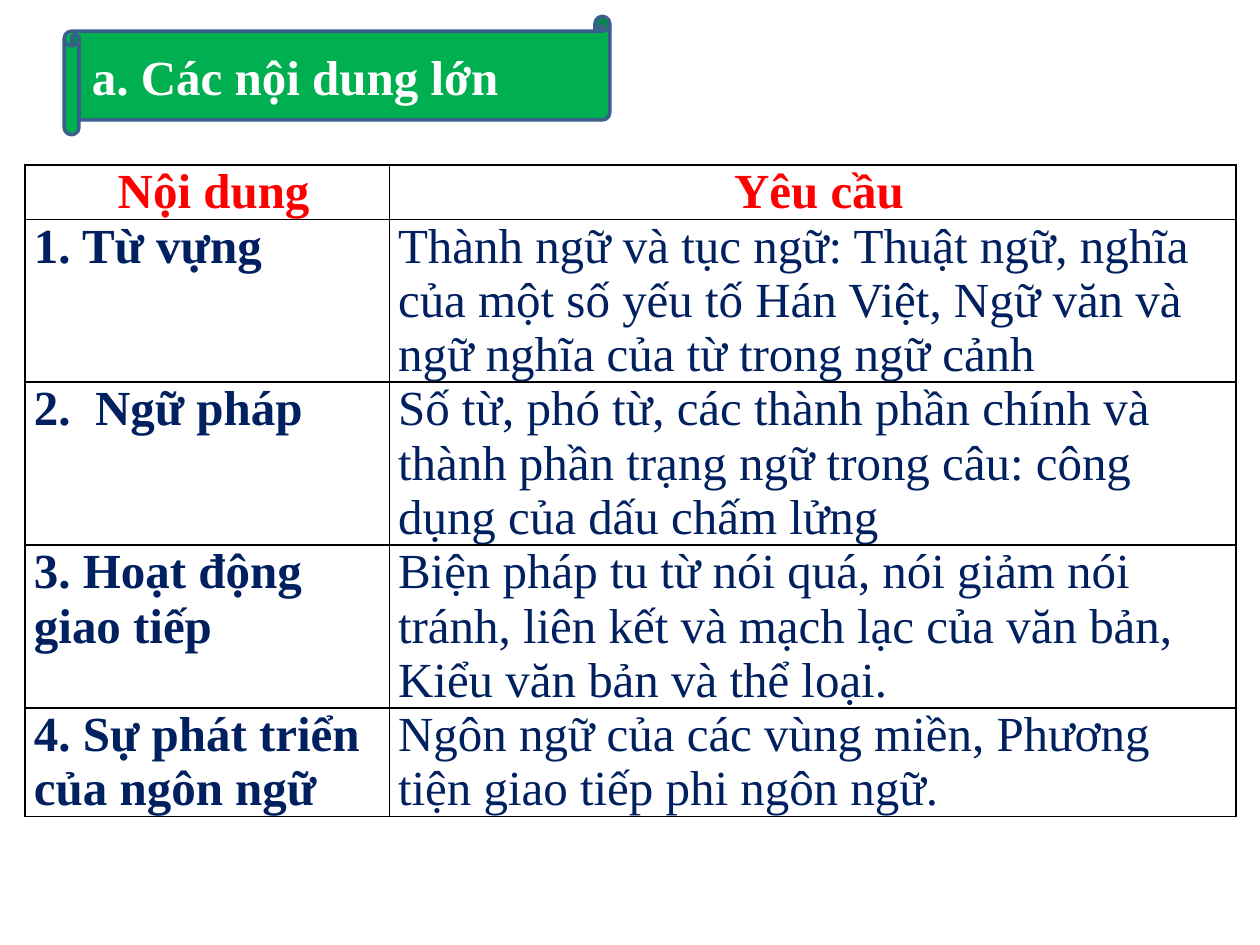
from dataclasses import dataclass

from lxml.etree import SubElement
from pptx import Presentation
from pptx.dml.color import RGBColor
from pptx.enum.shapes import MSO_SHAPE
from pptx.enum.text import MSO_ANCHOR, MSO_AUTO_SIZE, PP_ALIGN
from pptx.oxml.ns import qn
from pptx.util import Inches, Pt

GRID_COLUMNS, GRID_ROWS = 100, 75
LINE_ROWS = 4.31  # grid rows taken by one line of body text


@dataclass(frozen=True)
class Theme:
    font: str = "Times New Roman"
    size: int = 28
    banner: str = "00B050"
    banner_edge: str = "3A5F8C"
    white: str = "FFFFFF"
    heading: str = "FF0000"
    body: str = "002060"
    border: str = "000000"


class SlideBuilder:
    def __init__(self, presentation, theme):
        self.theme = theme
        self.column = presentation.slide_width / GRID_COLUMNS
        self.row = presentation.slide_height / GRID_ROWS
        self.slide = presentation.slides.add_slide(presentation.slide_layouts[5])

    def box(self, left, top, width, height):
        """Turn grid units into slide lengths."""
        return (round(left * self.column), round(top * self.row),
                round(width * self.column), round(height * self.row))

    def add_text(self, frame, text, color, bold, align=PP_ALIGN.LEFT):
        paragraph = frame.paragraphs[0]
        paragraph.alignment = align
        run = paragraph.add_run()
        run.text = text
        run.font.name = self.theme.font
        run.font.size = Pt(self.theme.size)
        run.font.bold = bold
        run.font.color.rgb = RGBColor.from_string(color)

    def banner(self, left, top, width, height):
        scroll = self.slide.shapes.add_shape(
            MSO_SHAPE.HORIZONTAL_SCROLL, *self.box(left, top, width, height))
        scroll.shadow.inherit = False
        scroll.fill.solid()
        scroll.fill.fore_color.rgb = RGBColor.from_string(self.theme.banner)
        scroll.line.color.rgb = RGBColor.from_string(self.theme.banner_edge)
        scroll.line.width = Pt(2)

    def title(self, text, left, top, width, height):
        """Fill the title placeholder and bring it in front of the banner."""
        title = self.slide.shapes.title
        title.left, title.top, title.width, title.height = self.box(left, top, width, height)
        frame = title.text_frame
        frame.word_wrap = True
        frame.auto_size = MSO_AUTO_SIZE.NONE
        frame.vertical_anchor = MSO_ANCHOR.MIDDLE
        self.add_text(frame, text, self.theme.white, True)
        title.element.getparent().append(title.element)

    def border(self, cell):
        properties = cell._tc.get_or_add_tcPr()
        for side in ("lnL", "lnR", "lnT", "lnB"):
            line = SubElement(properties, qn(f"a:{side}"), w=str(Pt(1)))
            fill = SubElement(line, qn("a:solidFill"))
            SubElement(fill, qn("a:srgbClr"), val=self.theme.border)

    def table(self, content, left, top, column_widths, row_lines):
        heights = [lines * LINE_ROWS for lines in row_lines]
        area = self.box(left, top, sum(column_widths), sum(heights))
        table = self.slide.shapes.add_table(len(heights), len(column_widths), *area).table
        table.first_row = table.horz_banding = False
        for column, width in zip(table.columns, column_widths):
            column.width = round(width * self.column)
        for row, height in zip(table.rows, heights):
            row.height = round(height * self.row)
        for r, texts in enumerate(content):
            for c, text in enumerate(texts):
                self.cell(table.cell(r, c), text, is_heading=r == 0, is_topic=c == 0)

    def cell(self, cell, text, is_heading, is_topic):
        self.border(cell)
        cell.fill.solid()
        cell.fill.fore_color.rgb = RGBColor.from_string(self.theme.white)
        cell.margin_left = Inches(0.17 if is_heading else 0.07)
        cell.margin_right = Inches(0.07)
        cell.margin_top = cell.margin_bottom = 0
        self.add_text(cell.text_frame, text,
                      self.theme.heading if is_heading else self.theme.body,
                      is_heading or is_topic,
                      PP_ALIGN.CENTER if is_heading else PP_ALIGN.LEFT)


REQUIREMENTS = [
    ("Nội dung", "Yêu cầu"),
    ("1. Từ vựng",
     "Thành ngữ và tục ngữ: Thuật ngữ, nghĩa của một số yếu tố Hán Việt, "
     "Ngữ văn và ngữ nghĩa của từ trong ngữ cảnh"),
    ("2.  Ngữ pháp",
     "Số từ, phó từ, các thành phần chính và thành phần trạng ngữ trong câu: "
     "công dụng của dấu chấm lửng"),
    ("3. Hoạt động giao tiếp",
     "Biện pháp tu từ nói quá, nói giảm nói tránh, liên kết và mạch lạc của văn bản, "
     "Kiểu văn bản và thể loại."),
    ("4. Sự phát triển của ngôn ngữ",
     "Ngôn ngữ của các vùng miền, Phương tiện giao tiếp phi ngôn ngữ."),
]


def main():
    presentation = Presentation()
    presentation.slide_width, presentation.slide_height = Inches(10), Inches(7.5)
    builder = SlideBuilder(presentation, Theme())
    builder.banner(5.1, 1.3, 43.3, 9.4)
    builder.title("a. Các nội dung lớn", 6.3, 2.5, 42, 7)
    builder.table(REQUIREMENTS, 2, 13.1, column_widths=(28.9, 67.2),
                  row_lines=(1, 3, 3, 3, 2))
    presentation.save("out.pptx")


if __name__ == "__main__":
    main()
